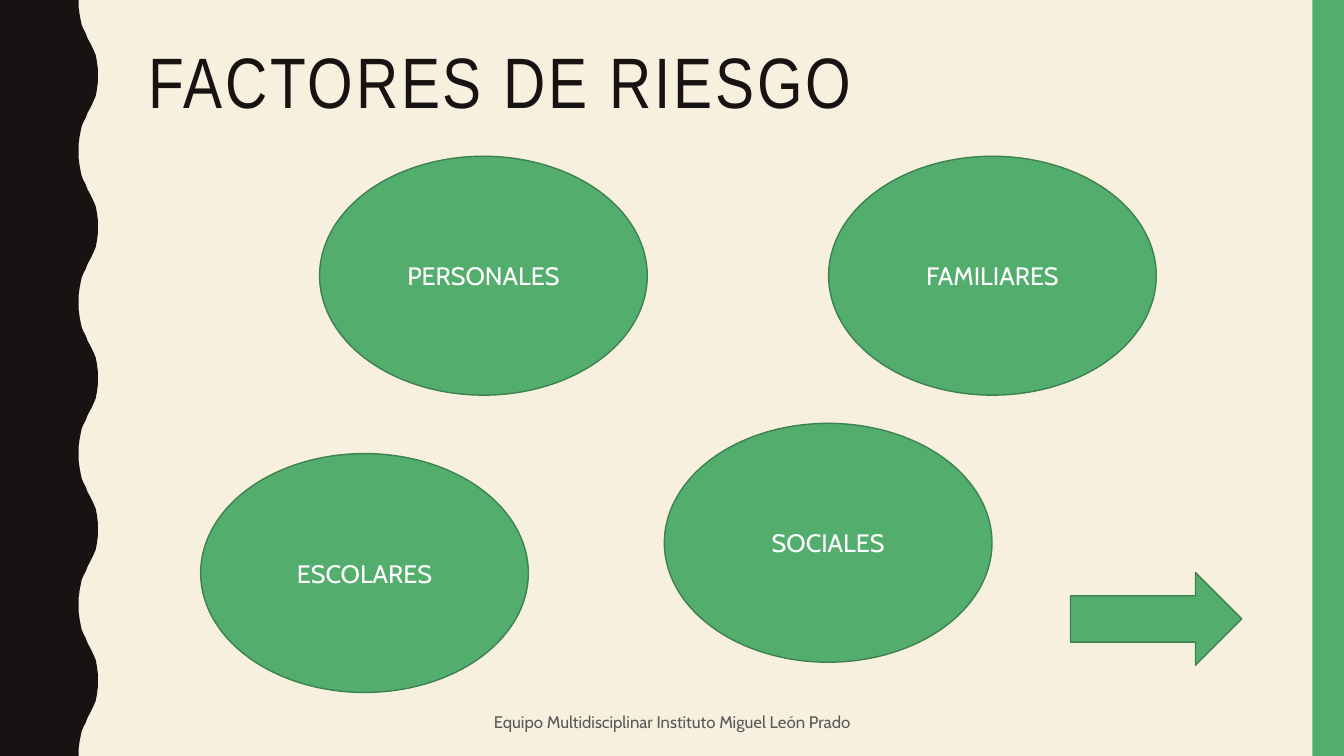
from pptx import Presentation
from pptx.dml.color import RGBColor
from pptx.enum.shapes import MSO_SHAPE
from pptx.enum.text import MSO_ANCHOR, PP_ALIGN
from pptx.util import Inches, Pt

RECT, ELLIPSE, ARROW = MSO_SHAPE.RECTANGLE, MSO_SHAPE.OVAL, MSO_SHAPE.RIGHT_ARROW
TOP, MIDDLE = MSO_ANCHOR.TOP, MSO_ANCHOR.MIDDLE
LEFT, CENTER = PP_ALIGN.LEFT, PP_ALIGN.CENTER

CREAM = RGBColor(0xF7, 0xF0, 0xDF)
INK = RGBColor(0x17, 0x13, 0x12)
GREEN = RGBColor(0x53, 0xAE, 0x6E)
DARK_GREEN = RGBColor(0x3D, 0x81, 0x51)
GRAY = RGBColor(0x59, 0x59, 0x59)
WHITE = RGBColor(0xFF, 0xFF, 0xFF)

TITLE_FONT, BODY_FONT = "Arial Narrow", "Cabin"
W, H = Inches(13.33), Inches(7.5)

# Half a wave, as shares of its depth and of its height
HALF_WAVE = [(0, 0), (0, 0.09), (0.05, 0.19), (0.11, 0.27), (0.16, 0.33),
             (0.26, 0.39), (0.37, 0.44), (0.47, 0.51), (0.58, 0.56),
             (0.68, 0.61), (0.79, 0.67), (0.89, 0.73), (0.95, 0.81),
             (1, 0.91), (1, 1)]
WAVES = 5
WAVE_LEFT, WAVE_DEPTH = 5.85, 1.43

# Ellipses: label, left, top
ELLIPSE_W, ELLIPSE_H = 24.38, 31.6
FACTORS = [("PERSONALES", 23.78, 20.67), ("FAMILIARES", 61.65, 20.67),
           ("ESCOLARES", 14.93, 60), ("SOCIALES", 49.43, 56)]


def px(share):
    """Percent of the slide's width."""
    return round(W * share / 100)


def py(share):
    """Percent of the slide's height."""
    return round(H * share / 100)


def box(x, y, w, h):
    return px(x), py(y), px(w), py(h)


def paint(sp, fill, line=None):
    sp.shadow.inherit = False
    sp.fill.solid()
    sp.fill.fore_color.rgb = fill
    if line is None:
        sp.line.fill.background()
    else:
        sp.line.color.rgb = line
        sp.line.width = Pt(1)


def put_text(sp, text, size, color, font=BODY_FONT, align=CENTER,
             anchor=MIDDLE, line_spacing=None, tracking=None):
    tf = sp.text_frame
    tf.word_wrap = True
    tf.vertical_anchor = anchor
    p = tf.paragraphs[0]
    p.alignment = align
    p.line_spacing = line_spacing
    r = p.add_run()
    r.text = text
    r.font.size = Pt(size)
    r.font.name = font
    r.font.color.rgb = color
    if tracking:
        r.font._element.set("spc", str(tracking * 100))


def add_shape(s, kind, place, fill, line=None):
    sp = s.shapes.add_shape(kind, *place)
    paint(sp, fill, line)
    return sp


def add_wavy_edge(s):
    half = 50 / WAVES
    points = []
    for i in range(WAVES):
        start = 2 * half * i
        points += [(dx, start + half * dy) for dx, dy in HALF_WAVE]
        points += [(dx, start + half * (2 - dy)) for dx, dy in HALF_WAVE[-2::-1]]
    outline = [(px(WAVE_LEFT + WAVE_DEPTH * dx), py(y)) for dx, y in points]
    fb = s.shapes.build_freeform(0, 0)
    fb.add_line_segments(outline + [(0, H)], close=True)
    paint(fb.convert_to_shape(), INK)


def main():
    prs = Presentation()
    prs.slide_width, prs.slide_height = W, H
    s = prs.slides.add_slide(prs.slide_layouts[6])
    s.background.fill.solid()
    s.background.fill.fore_color.rgb = CREAM

    # Side decoration
    add_wavy_edge(s)
    add_shape(s, RECT, box(97.65, 0, 2.35, 100), GREEN)

    # Title and footer
    title = s.shapes.add_textbox(*box(10.28, 5.6, 83.48, 21.73))
    put_text(title, "FACTORES DE RIESGO", 51, INK, font=TITLE_FONT, align=LEFT,
             anchor=TOP, line_spacing=0.9, tracking=2)
    footer = s.shapes.add_textbox(*box(33.15, 92.93, 33.75, 5.07))
    put_text(footer, "Equipo Multidisciplinar Instituto Miguel León Prado", 12, GRAY)

    # Risk factors
    for label, x, y in FACTORS:
        sp = add_shape(s, ELLIPSE, box(x, y, ELLIPSE_W, ELLIPSE_H), GREEN, DARK_GREEN)
        put_text(sp, label, 18, WHITE)

    # Arrow to the next slide
    add_shape(s, ARROW, box(79.65, 75.73, 12.75, 12.27), GREEN, DARK_GREEN)

    prs.save("out.pptx")


if __name__ == "__main__":
    main()
